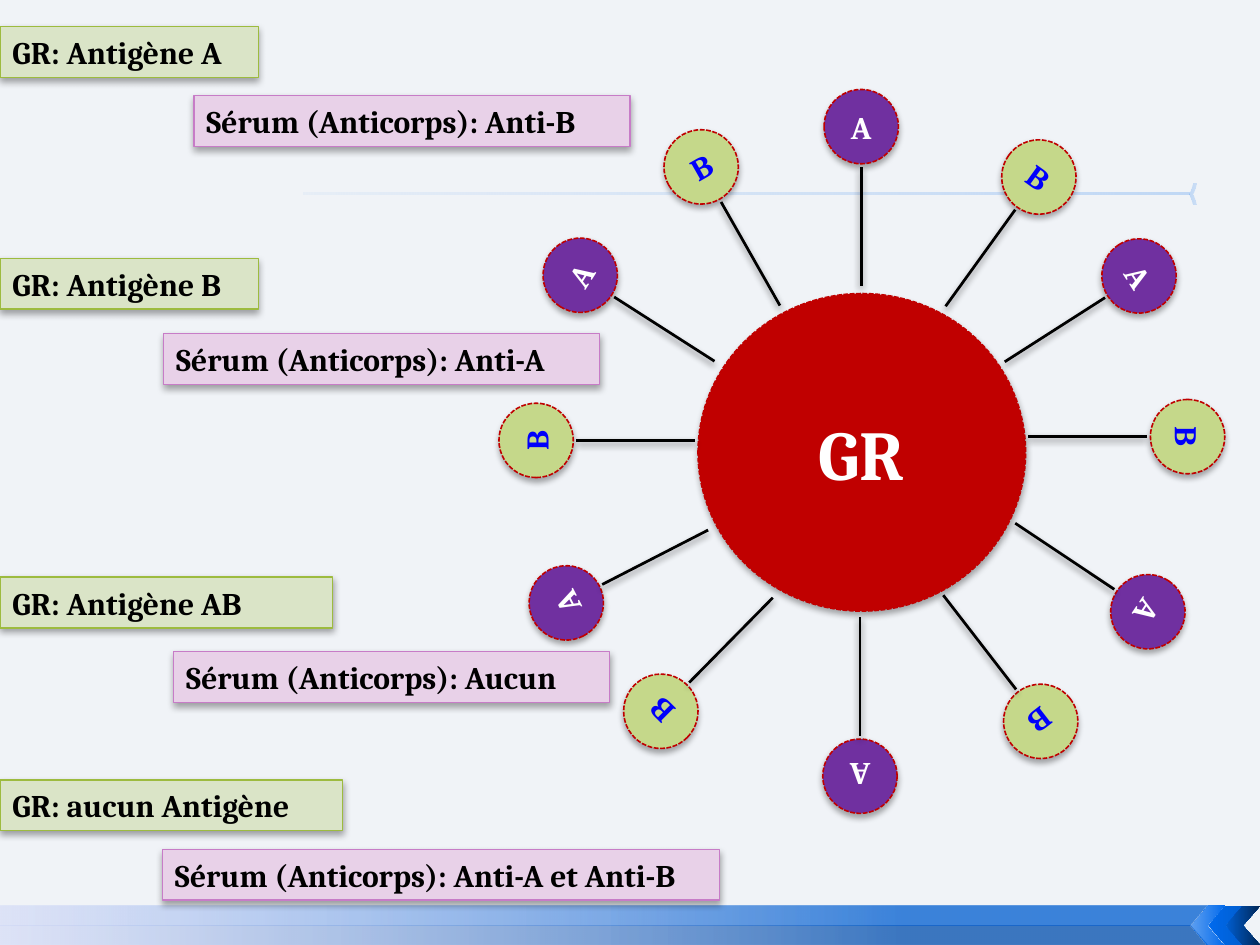
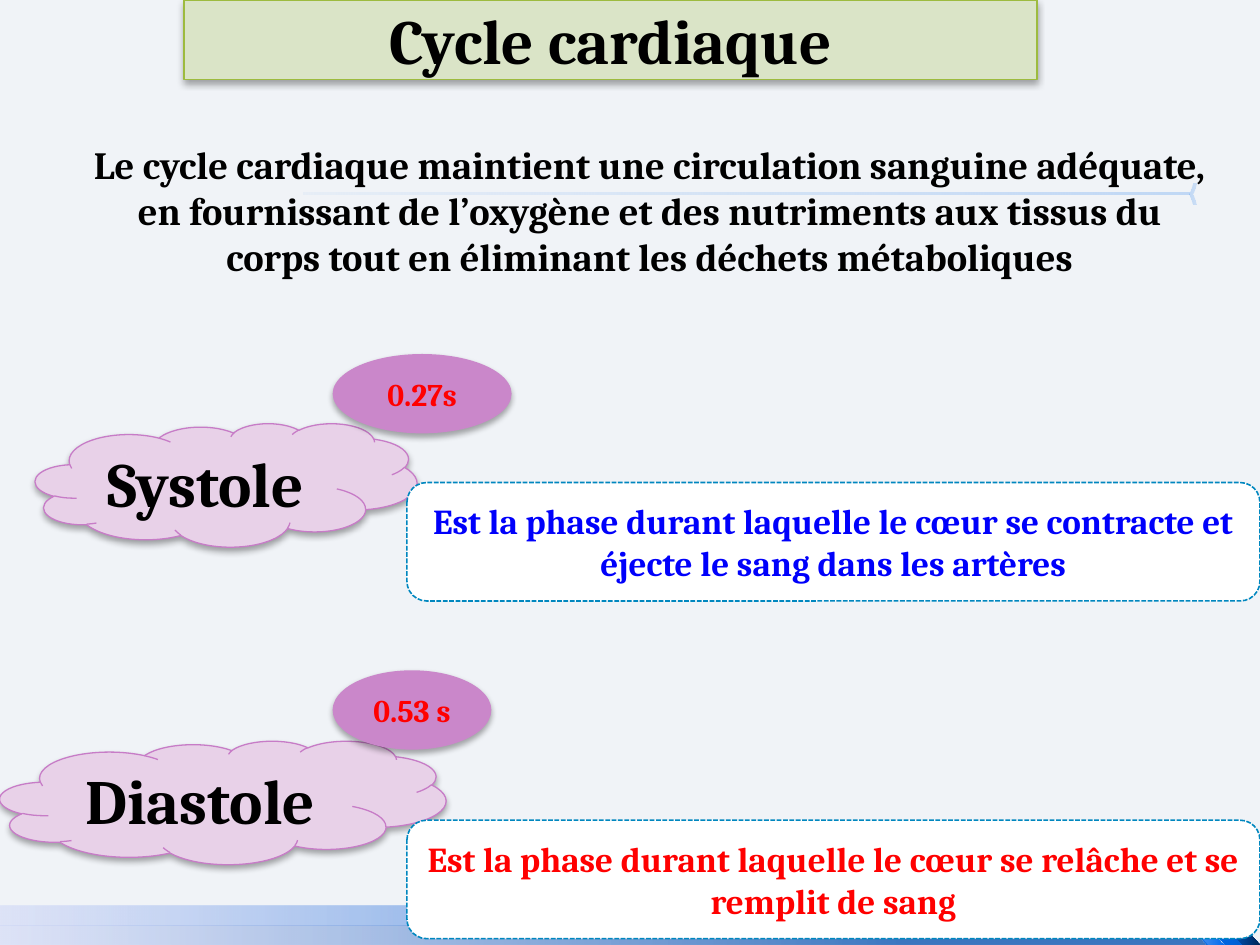
from dataclasses import dataclass
from math import cos, radians, sin
from typing import NamedTuple, Optional

from pptx import Presentation
from pptx.dml.color import RGBColor
from pptx.enum.dml import MSO_LINE
from pptx.enum.shapes import MSO_CONNECTOR, MSO_SHAPE as Preset
from pptx.enum.text import MSO_ANCHOR, MSO_AUTO_SIZE, PP_ALIGN
from pptx.oxml import parse_xml
from pptx.oxml.ns import nsdecls
from pptx.util import Emu, Inches, Pt

SLIDE_WIDTH, SLIDE_HEIGHT = Inches(10), Inches(7.5)
CELL = SLIDE_WIDTH / 100  # the grid has 100 columns and 75 rows
FONT = "Cambria"

BLACK = RGBColor(0x00, 0x00, 0x00)
WHITE = RGBColor(0xFF, 0xFF, 0xFF)
RED = RGBColor(0xFF, 0x00, 0x00)
BLUE = RGBColor(0x00, 0x00, 0xFB)
BLOOD = RGBColor(0xC0, 0x00, 0x00)
PURPLE = RGBColor(0x70, 0x30, 0xA0)
LIME = RGBColor(0xC5, 0xD8, 0x8A)
PALE_GREEN = RGBColor(0xDA, 0xE4, 0xC7)
GREEN = RGBColor(0x9D, 0xBB, 0x3F)
PALE_MAUVE = RGBColor(0xE8, 0xD1, 0xE8)
MAUVE = RGBColor(0xC7, 0x7C, 0xC7)
ORCHID = RGBColor(0xCA, 0x87, 0xCA)
TEAL = RGBColor(0x00, 0x87, 0xBF)
BACKGROUND = RGBColor(0xF0, 0xF3, 0xF7)
BAND_DARK = RGBColor(0x00, 0x4E, 0xAF)
BAND_MID = RGBColor(0x00, 0x5E, 0xD1)
BAND_BRIGHT = RGBColor(0x00, 0x6A, 0xED)
BAND_PALE = RGBColor(0xCC, 0xD4, 0xF8)
BAND_NAVY = RGBColor(0x00, 0x27, 0x57)


class Area(NamedTuple):
    """Columns and rows of the grid."""
    left: float
    top: float
    width: float
    height: float


class Stop(NamedTuple):
    position: int
    colour: RGBColor
    opacity: int = 100


class Shadow(NamedTuple):
    opacity: int
    blur: float
    distance: float


class Antigen(NamedTuple):
    letter: str
    centre_x: float
    centre_y: float
    rotation: float


class Phase(NamedTuple):
    name: str
    cloud: Area
    duration: str
    bubble: Area
    definition: str
    definition_top: float
    colour: RGBColor


@dataclass(frozen=True)
class Look:
    fill: RGBColor
    line: Optional[RGBColor]
    shadow: Optional[Shadow]
    dashed: bool = False


SOFT = Shadow(32, 3.5, 2.2)
FIRM = Shadow(35, 4, 2)
STRONG = Shadow(45, 4, 2)
CELL_LOOK = Look(BLOOD, BLOOD, SOFT, True)
GREEN_LOOK = Look(PALE_GREEN, GREEN, FIRM)
MAUVE_LOOK = Look(PALE_MAUVE, MAUVE, FIRM)
BUBBLE_LOOK = Look(ORCHID, None, SOFT)
NOTE_LOOK = Look(WHITE, TEAL, None, True)
ANTIGEN_LOOKS = {
    "A": (Look(PURPLE, BLOOD, SOFT, True), WHITE),
    "B": (Look(LIME, BLOOD, SOFT, True), BLUE),
}

RED_CELL = Area(55.4, 23.3, 26, 25.2)
BALL = 5.9
SPOKE_START, SPOKE_END = 3.2, 12.65  # distances from the centre of the ball
ANTIGENS = [
    Antigen("A", 68.35, 10.05, 0),
    Antigen("B", 82.45, 14.05, 35.8),
    Antigen("A", 90.4, 21.9, 57.4),
    Antigen("B", 94.25, 34.65, 90),
    Antigen("A", 91.1, 48.55, 123.7),
    Antigen("B", 82.6, 57.25, 142.3),
    Antigen("A", 68.25, 61.6, 180),
    Antigen("B", 52.45, 56.45, 224.6),
    Antigen("A", 44.95, 47.85, 242.8),
    Antigen("B", 42.55, 34.95, 270),
    Antigen("A", 46.05, 21.85, 302.6),
    Antigen("B", 55.65, 13.25, 330.4),
]

LABEL_HEIGHT = 4.04
GROUP_LABELS = [
    (GREEN_LOOK, "GR: Antigène A", 0, 2.1, 20.5),
    (GREEN_LOOK, "GR: Antigène B", 0, 20.5, 20.5),
    (GREEN_LOOK, "GR: Antigène AB", 0, 45.8, 26.4),
    (GREEN_LOOK, "GR: aucun Antigène", 0, 61.9, 27.2),
    (MAUVE_LOOK, "Sérum (Anticorps): Anti-B", 15.4, 7.6, 34.6),
    (MAUVE_LOOK, "Sérum (Anticorps): Anti-A", 13, 26.5, 34.6),
    (MAUVE_LOOK, "Sérum (Anticorps): Aucun", 13.8, 51.7, 34.6),
    (MAUVE_LOOK, "Sérum (Anticorps): Anti-A et Anti-B", 12.9, 67.4, 44.2),
]

PHASES = [
    Phase("Systole ", Area(2.8, 33.6, 30.3, 9.8), "0.27s", Area(26.4, 28.1, 14.2, 6.3),
          "Est la phase durant laquelle le cœur se contracte et éjecte le sang "
          "dans les artères", 38.3, BLUE),
    Phase("Diastole ", Area(0, 58.8, 35.4, 9.8), "0.53 s", Area(26.4, 53.2, 12.6, 6.3),
          "Est la phase durant laquelle le cœur se relâche et se remplit de sang",
          65.1, RED),
]


def cells(count: float) -> Emu:
    return Emu(round(count * CELL))


def cast_shadow(shape, shadow: Optional[Shadow]) -> None:
    """Replace the theme's effect; call it after fill and line are set."""
    inner = ""
    if shadow:
        inner = (f'<a:outerShdw blurRad="{Pt(shadow.blur)}" dist="{Pt(shadow.distance)}" '
                 f'dir="5400000" rotWithShape="0"><a:srgbClr val="000000">'
                 f'<a:alpha val="{shadow.opacity * 1000}"/></a:srgbClr></a:outerShdw>')
    shape.element.spPr.append(
        parse_xml(f'<a:effectLst {nsdecls("a")}>{inner}</a:effectLst>'))


def fill_gradient(shape, *stops: Stop) -> None:
    """Fill from right to left, without outline or shadow."""
    marks = "".join(
        f'<a:gs pos="{stop.position * 1000}"><a:srgbClr val="{stop.colour}">'
        f'<a:alpha val="{stop.opacity * 1000}"/></a:srgbClr></a:gs>' for stop in stops)
    shape.element.spPr.append(parse_xml(
        f'<a:gradFill {nsdecls("a")} rotWithShape="1"><a:gsLst>{marks}</a:gsLst>'
        '<a:lin ang="10800000" scaled="0"/></a:gradFill>'))
    shape.line.fill.background()
    cast_shadow(shape, None)


def apply_look(shape, look: Look) -> None:
    shape.fill.solid()
    shape.fill.fore_color.rgb = look.fill
    if look.line is None:
        shape.line.fill.background()
    else:
        shape.line.color.rgb = look.line
        shape.line.width = Pt(0.9 if look.dashed else 0.75)
        if look.dashed:
            shape.line.dash_style = MSO_LINE.SQUARE_DOT
    cast_shadow(shape, look.shadow)


def write(shape, text: str, size: float, colour: RGBColor = BLACK,
          align: PP_ALIGN = PP_ALIGN.CENTER, anchor: MSO_ANCHOR = MSO_ANCHOR.MIDDLE) -> None:
    frame = shape.text_frame
    frame.text = text
    frame.word_wrap = True
    frame.auto_size = MSO_AUTO_SIZE.NONE
    frame.vertical_anchor = anchor
    para = frame.paragraphs[0]
    para.alignment = align
    para.space_before = Pt(0)
    font = para.runs[0].font
    font.name, font.size, font.bold = FONT, Pt(size), True
    font.color.rgb = colour


def add_preset(page, preset: Preset, area: Area):
    return page.shapes.add_shape(preset, *map(cells, area))


def add_box(page, preset: Preset, area: Area, look: Look, text: str, size: float,
            colour: RGBColor = BLACK, align: PP_ALIGN = PP_ALIGN.CENTER):
    box = add_preset(page, preset, area)
    apply_look(box, look)
    write(box, text, size, colour, align)
    return box


def place(placeholder, area: Area) -> None:
    placeholder.left, placeholder.top, placeholder.width, placeholder.height = map(cells, area)


def add_band(page, outer_row: float, colour: RGBColor):
    """Half of the footer band, pointing to the middle row."""
    middle_row = 73.45
    corners = [(0, outer_row), (0, middle_row), (94.4, middle_row)]
    builder = page.shapes.build_freeform(cells(95.8), cells(outer_row))
    builder.add_line_segments([(cells(x), cells(y)) for x, y in corners], close=True)
    band = builder.convert_to_shape()
    fill_gradient(band, Stop(25, colour, 75), Stop(100, BAND_PALE, 50))
    return band


def add_chevron(page, area: Area, *stops: Stop):
    chevron = add_preset(page, Preset.CHEVRON, area)
    chevron.element.spPr.xfrm.set("flipH", "1")
    fill_gradient(chevron, *stops)
    return chevron


def decorate_master(master, page) -> None:
    """Draw the shared decoration on a page and move it to the master."""
    master.background.fill.solid()
    master.background.fill.fore_color.rgb = BACKGROUND
    parts = [add_band(page, 75, BAND_DARK), add_band(page, 71.9, BAND_MID)]
    chevron_stops = [
        (Stop(0, BAND_BRIGHT, 60), Stop(100, BAND_BRIGHT)),
        (Stop(0, BAND_BRIGHT), Stop(100, BAND_MID)),
        (Stop(0, BAND_MID), Stop(100, BAND_NAVY)),
    ]
    for index, stops in enumerate(chevron_stops):
        parts.append(add_chevron(page, Area(94.5 + 1.4 * index, 71.9, 2.7, 3.1), *stops))
    parts.append(add_chevron(page, Area(94.4, 14.6, 0.6, 1.6),
                             Stop(0, BAND_BRIGHT, 20), Stop(100, BAND_BRIGHT, 15)))
    rule = add_preset(page, Preset.RECTANGLE, Area(24.1, 15.25, 70.3, 0.2))
    fill_gradient(rule, Stop(0, BAND_BRIGHT, 20), Stop(100, BAND_BRIGHT, 4))
    parts.append(rule)
    for index, part in enumerate(parts):
        part.element.nvSpPr.cNvPr.set("id", str(100 + index))
        master.shapes.element.insert(2 + index, part.element)


def add_antigen(page, antigen: Antigen) -> None:
    look, colour = ANTIGEN_LOOKS[antigen.letter]
    x, y = antigen.centre_x, antigen.centre_y
    ball = add_box(page, Preset.OVAL, Area(x - BALL / 2, y - BALL / 2, BALL, BALL),
                   look, antigen.letter, 18, colour)
    ball.rotation = antigen.rotation
    angle = radians(antigen.rotation)
    ends = [cells(value) for reach in (SPOKE_START, SPOKE_END)
            for value in (x - reach * sin(angle), y + reach * cos(angle))]
    spoke = page.shapes.add_connector(MSO_CONNECTOR.STRAIGHT, *ends)
    spoke.line.color.rgb = BLACK
    spoke.line.width = Pt(1.57)
    cast_shadow(spoke, STRONG)


def build_blood_groups(page) -> None:
    add_box(page, Preset.OVAL, RED_CELL, CELL_LOOK, "GR", 40, WHITE)
    for antigen in ANTIGENS:
        add_antigen(page, antigen)
    for look, text, left, top, width in GROUP_LABELS:
        add_box(page, Preset.RECTANGLE, Area(left, top, width, LABEL_HEIGHT),
                look, text, 18, align=PP_ALIGN.LEFT)


def build_cardiac_cycle(page) -> None:
    title, body = page.shapes.title, page.placeholders[1]
    place(title, Area(14.6, 0, 67.7, 6.3))
    title.element.spPr.append(parse_xml(
        f'<a:prstGeom {nsdecls("a")} prst="roundRect"><a:avLst/></a:prstGeom>'))
    apply_look(title, GREEN_LOOK)
    write(title, "Cycle cardiaque", 36)

    place(body, Area(5.9, 10.7, 91.3, 12.1))
    write(body, "Le cycle cardiaque maintient une circulation sanguine adéquate, en "
          "fournissant de l’oxygène et des nutriments aux tissus du corps tout en "
          "éliminant les déchets métaboliques", 22, anchor=MSO_ANCHOR.TOP)
    properties = body.text_frame.paragraphs[0]._p.get_or_add_pPr()
    properties.set("marL", "0")
    properties.set("indent", "0")
    properties.append(parse_xml(f'<a:buNone {nsdecls("a")}/>'))

    for phase in PHASES:
        add_box(page, Preset.CLOUD, phase.cloud, MAUVE_LOOK, phase.name, 36)
        add_box(page, Preset.ROUNDED_RECTANGLE, Area(32.3, phase.definition_top, 67.7, 9.4),
                NOTE_LOOK, phase.definition, 20, phase.colour)
        add_box(page, Preset.OVAL, phase.bubble, BUBBLE_LOOK, phase.duration, 18, RED)


def main() -> None:
    deck = Presentation()
    deck.slide_width, deck.slide_height = SLIDE_WIDTH, SLIDE_HEIGHT
    groups_page = deck.slides.add_slide(deck.slide_layouts[6])
    decorate_master(deck.slide_master, groups_page)
    build_blood_groups(groups_page)
    build_cardiac_cycle(deck.slides.add_slide(deck.slide_layouts[1]))
    deck.save("out.pptx")


if __name__ == "__main__":
    main()
